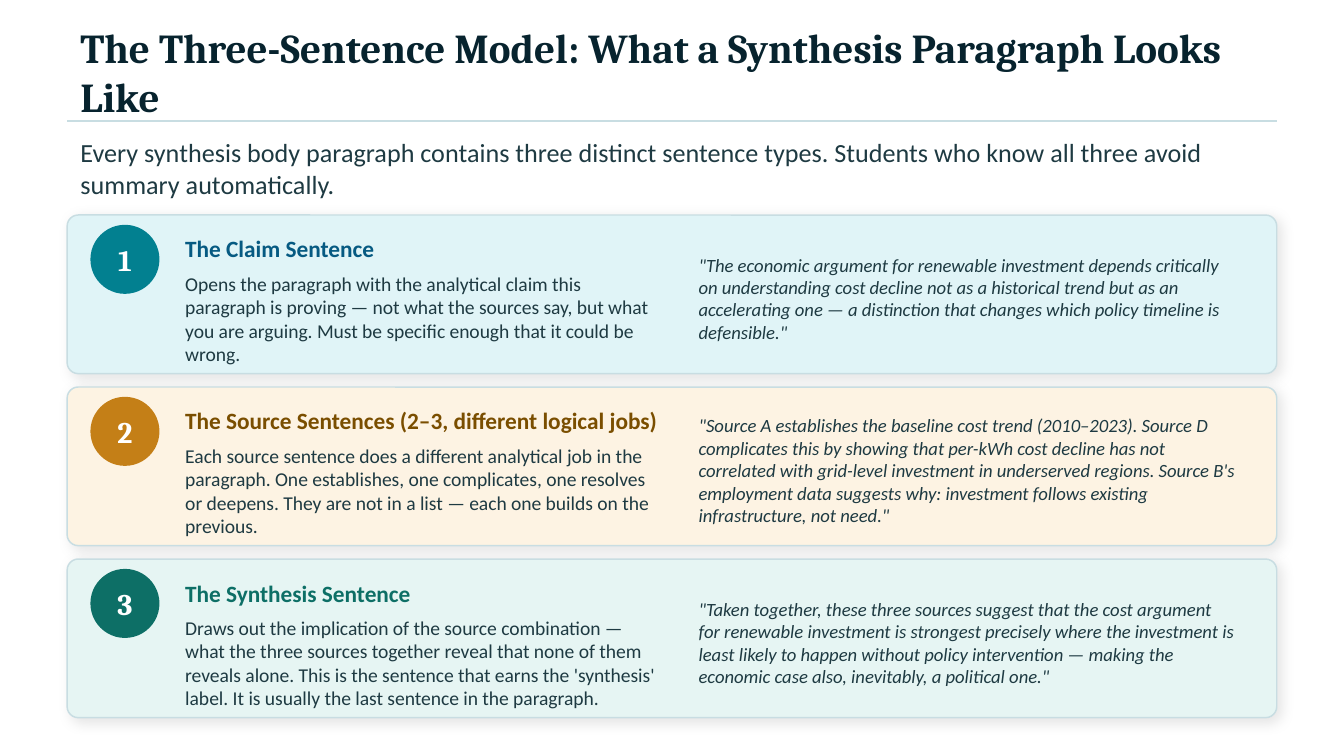
from lxml import etree
from pptx import Presentation
from pptx import util as u
from pptx.dml import color
from pptx.enum import shapes, text
from pptx.oxml import ns

SCALE = 4572  # EMU per px, 200 px to the inch
INK, RULE = "1E3A42", "C8DDE2"

TITLE = dict(name="Cambria", size=22, bold=True, color="07232E")
INTRO = dict(name="Calibri", size=14, color=INK)
NUMBER = dict(name="Cambria", size=16, bold=True, color="FFFFFF")
HEADING = dict(name="Calibri", size=12.5, bold=True)
BODY = dict(name="Calibri", size=10.5, color=INK)
QUOTE = dict(name="Calibri", size=10, italic=True, color=INK)

# Card fill, badge colour, heading colour, heading, explanation, example
CARDS = [
    ("E0F4F7", "028090", "065A82", "The Claim Sentence",
     "Opens the paragraph with the analytical claim this paragraph is proving — not what the "
     "sources say, but what you are arguing. Must be specific enough that it could be wrong.",
     '"The economic argument for renewable investment depends critically on understanding cost '
     'decline not as a historical trend but as an accelerating one — a distinction that changes '
     'which policy timeline is defensible."'),
    ("FDF3E3", "C47F17", "7A4E00", "The Source Sentences (2–3, different logical jobs)",
     "Each source sentence does a different analytical job in the paragraph. One establishes, one "
     "complicates, one resolves or deepens. They are not in a list — each one builds on the previous.",
     '"Source A establishes the baseline cost trend (2010–2023). Source D complicates this by '
     'showing that per-kWh cost decline has not correlated with grid-level investment in '
     "underserved regions. Source B's employment data suggests why: investment follows existing "
     'infrastructure, not need."'),
    ("E6F5F3", "0D6F66", "0D6F66", "The Synthesis Sentence",
     "Draws out the implication of the source combination — what the three sources together reveal "
     "that none of them reveals alone. This is the sentence that earns the 'synthesis' label. It is "
     "usually the last sentence in the paragraph.",
     '"Taken together, these three sources suggest that the cost argument for renewable investment '
     'is strongest precisely where the investment is least likely to happen without policy '
     'intervention — making the economic case also, inevitably, a political one."'),
]


def px(*lengths):
    return [u.Emu(length * SCALE) for length in lengths]


def paint(target, value):
    """Give a fill or a font colour the hex value."""
    if hasattr(target, "solid"):
        target.solid()
        target = target.fore_color
    target.rgb = color.RGBColor.from_string(value)


def write(shape, words, style, align=None):
    frame = shape.text_frame
    frame.word_wrap = True
    frame.vertical_anchor = text.MSO_ANCHOR.MIDDLE
    paragraph = frame.paragraphs[0]
    paragraph.alignment = align
    run = paragraph.add_run()
    run.text = words
    for key, value in style.items():
        if key == "color":
            paint(run.font.color, value)
        else:
            setattr(run.font, key, u.Pt(value) if key == "size" else value)


def add_text(slide, box, words, style):
    write(slide.shapes.add_textbox(*px(*box)), words, style)


def add_block(slide, kind, box, fill, line, width):
    shape = slide.shapes.add_shape(kind, *px(*box))
    paint(shape.fill, fill)
    paint(shape.line.fill, line)
    shape.line.width = u.Pt(width)
    shape.shadow.inherit = False
    return shape


def add_soft_shadow(shape):
    effects = shape.element.spPr.find(ns.qn("a:effectLst"))
    shadow = etree.SubElement(effects, ns.qn("a:outerShdw"), blurRad=str(u.Pt(7)),
                              dist=str(u.Pt(2)), dir=str(45 * 60000), algn="bl", rotWithShape="0")
    black = etree.SubElement(shadow, ns.qn("a:srgbClr"), val="000000")
    etree.SubElement(black, ns.qn("a:alpha"), val="9000")


def add_header(slide, left, top, width):
    add_text(slide, (left, top, width, 124), TITLE_WORDS, TITLE)
    # Rule under the title
    rule_y = top + 136
    rule = slide.shapes.add_connector(shapes.MSO_CONNECTOR.STRAIGHT,
                                      *px(left, rule_y, left + width, rule_y))
    paint(rule.line.fill, RULE)
    rule.line.width = u.Pt(1.2)
    etree.SubElement(rule.element.spPr, ns.qn("a:effectLst"))
    add_text(slide, (left, top + 156, width, 100), INTRO_WORDS, INTRO)


def add_card(slide, left, top, width, height, number, card):
    fill, badge_color, heading_color, heading, explanation, example = card
    panel = add_block(slide, shapes.MSO_SHAPE.ROUNDED_RECTANGLE,
                      (left, top, width, height), fill, RULE, 0.8)
    panel.adjustments[0] = 0.07
    add_soft_shadow(panel)

    # Numbered badge
    badge = add_block(slide, shapes.MSO_SHAPE.OVAL, (left + 36, top + 16, 100, 100),
                      badge_color, badge_color, 1)
    frame = badge.text_frame
    for side in ("left", "top", "right", "bottom"):
        setattr(frame, f"margin_{side}", 0)
    write(badge, str(number), NUMBER, text.PP_ALIGN.CENTER)

    # Heading and explanation, then the example on the right
    add_text(slide, (left + 156, top + 16, 1600, 68), heading, dict(HEADING, color=heading_color))
    add_text(slide, (left + 156, top + 88, 744, 132), explanation, BODY)
    add_text(slide, (left + 920, top + 24, 840, 200), example, QUOTE)


TITLE_WORDS = "The Three-Sentence Model: What a Synthesis Paragraph Looks Like"
INTRO_WORDS = ("Every synthesis body paragraph contains three distinct sentence types. "
               "Students who know all three avoid summary automatically.")


def main():
    presentation = Presentation()
    presentation.slide_width, presentation.slide_height = px(2000, 1125)
    slide = presentation.slides.add_slide(presentation.slide_layouts[6])
    paint(slide.background.fill, "FFFFFF")

    left, width, height, gap = 100, 1800, 236, 20
    add_header(slide, left, 44, width)
    for index, card in enumerate(CARDS):
        add_card(slide, left, 320 + index * (height + gap), width, height, index + 1, card)
    presentation.save("out.pptx")


if __name__ == "__main__":
    main()
